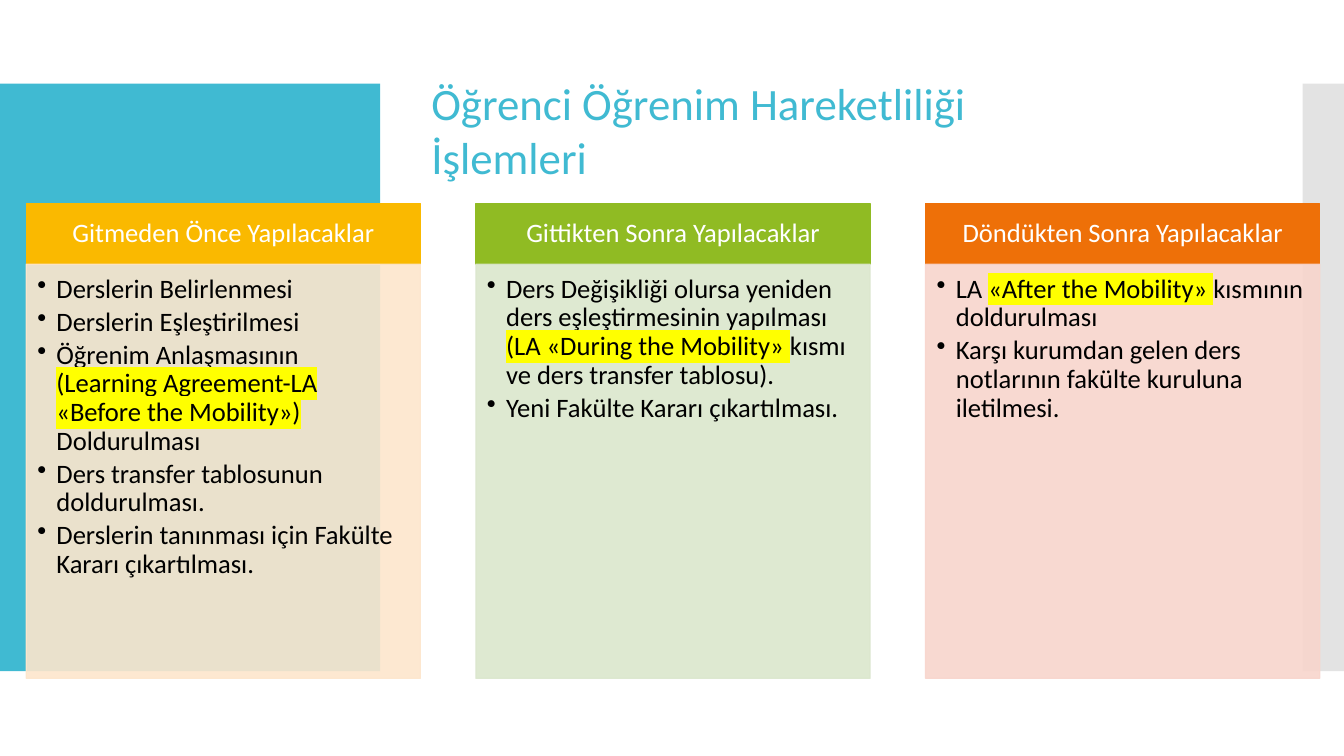
"""Build the slide on the steps of student study mobility."""
import dataclasses

import lxml.etree
import pptx
import pptx.dml.color
import pptx.enum.shapes
import pptx.enum.text
import pptx.oxml.ns
import pptx.util

EMU_PER_PX = 9144
FONT = "Calibri"
COLOURS = {
    "teal": "40BAD2", "grey": "C8C8C8", "white": "FFFFFF", "black": "000000",
    "marker": "FFFF00", "amber": "FAB900", "cream": "FDE6CC", "green": "90BB23",
    "mint": "DBE7CD", "orange": "EE7008", "pink": "F8D5CC",
}


@dataclasses.dataclass(frozen=True)
class Span:
    text: str
    marked: bool = False


@dataclasses.dataclass(frozen=True)
class Column:
    title: str
    header_colour: str
    body_colour: str
    items: tuple[tuple[Span, ...], ...]


COLUMNS = (
    Column("Gitmeden Önce Yapılacaklar", "amber", "cream", (
        (Span("Derslerin Belirlenmesi"),),
        (Span("Derslerin Eşleştirilmesi"),),
        (Span("Öğrenim Anlaşmasının "),
         Span("(Learning Agreement-LA «Before the Mobility») ", True),
         Span("Doldurulması")),
        (Span("Ders transfer tablosunun doldurulması."),),
        (Span("Derslerin tanınması için Fakülte Kararı çıkartılması."),),
    )),
    Column("Gittikten Sonra Yapılacaklar", "green", "mint", (
        (Span("Ders Değişikliği olursa yeniden ders eşleştirmesinin yapılması "),
         Span("(LA «During the Mobility» ", True),
         Span("kısmı ve ders transfer tablosu).")),
        (Span("Yeni Fakülte Kararı çıkartılması."),),
    )),
    Column("Döndükten Sonra Yapılacaklar", "orange", "pink", (
        (Span("LA "), Span("«After the Mobility» ", True), Span("kısmının doldurulması")),
        (Span("Karşı kurumdan gelen ders notlarının fakülte kuruluna iletilmesi."),),
    )),
)
COLUMN_LEFT, COLUMN_PITCH, COLUMN_WIDTH = 26, 446, 391
HEADER_TOP, HEADER_HEIGHT, BODY_HEIGHT = 202, 60, 411


def px(value: int) -> pptx.util.Emu:
    return pptx.util.Emu(value * EMU_PER_PX)


def rgb(name: str) -> pptx.dml.color.RGBColor:
    return pptx.dml.color.RGBColor.from_string(COLOURS[name])


def add_child(parent, tag: str, **attributes: str):
    child = lxml.etree.SubElement(parent, pptx.oxml.ns.qn(tag))
    for key, value in attributes.items():
        child.set(key, value)
    return child


def add_rectangle(page, left: int, top: int, width: int, height: int, colour: str,
                  opacity: int = 100, outlined: bool = False):
    box = page.shapes.add_shape(pptx.enum.shapes.MSO_SHAPE.RECTANGLE,
                                px(left), px(top), px(width), px(height))
    box.shadow.inherit = False
    box.fill.solid()
    box.fill.fore_color.rgb = rgb(colour)
    if outlined:
        box.line.color.rgb = rgb(colour)
        box.line.width = pptx.util.Pt(0.85)
    else:
        box.line.fill.background()
    if opacity < 100:
        for fill_colour in box._element.spPr.iter(pptx.oxml.ns.qn("a:srgbClr")):
            add_child(fill_colour, "a:alpha", val=str(opacity * 1000))
    return box


def set_frame(box, anchor, left: int, top: int, right: int, bottom: int):
    frame = box.text_frame
    frame.word_wrap = True
    frame.vertical_anchor = anchor
    frame.margin_left, frame.margin_top = px(left), px(top)
    frame.margin_right, frame.margin_bottom = px(right), px(bottom)
    return frame


def write_spans(para, spans: tuple[Span, ...], size: int, colour: str, align) -> None:
    para.alignment = align
    para.font.name = FONT
    para.font.size = pptx.util.Pt(size)
    para.font.color.rgb = rgb(colour)
    for span in spans:
        run = para.add_run()
        run.text = span.text
        if span.marked:
            highlight = add_child(run._r.get_or_add_rPr(), "a:highlight")
            add_child(highlight, "a:srgbClr", val=COLOURS["marker"])


def set_bullet(para) -> None:
    properties = para._p.get_or_add_pPr()
    properties.set("marL", str(px(19)))
    properties.set("indent", str(px(-19)))
    bullet = add_child(properties, "a:buChar", char="•")
    properties.find(pptx.oxml.ns.qn("a:defRPr")).addprevious(bullet)


def add_column(page, index: int, column: Column) -> None:
    align = pptx.enum.text.PP_ALIGN
    anchor = pptx.enum.text.MSO_ANCHOR
    left = COLUMN_LEFT + index * COLUMN_PITCH
    header = add_rectangle(page, left, HEADER_TOP, COLUMN_WIDTH, HEADER_HEIGHT,
                           column.header_colour, outlined=True)
    frame = set_frame(header, anchor.MIDDLE, 15, 8, 15, 8)
    para = frame.paragraphs[0]
    write_spans(para, (Span(column.title),), 19, "white", align.CENTER)
    para.line_spacing = 0.9

    body = add_rectangle(page, left, HEADER_TOP + HEADER_HEIGHT, COLUMN_WIDTH, BODY_HEIGHT,
                         column.body_colour, opacity=90, outlined=True)
    frame = set_frame(body, anchor.TOP, 11, 11, 15, 17)
    for number, spans in enumerate(column.items):
        para = frame.add_paragraph() if number else frame.paragraphs[0]
        write_spans(para, spans, 19, "black", align.LEFT)
        para.line_spacing = 0.9
        para.space_after = pptx.util.Pt(3)
        set_bullet(para)


def add_title(page) -> None:
    box = page.shapes.add_textbox(px(418), px(70), px(590), px(118))
    frame = set_frame(box, pptx.enum.text.MSO_ANCHOR.TOP, 10, 5, 10, 5)
    write_spans(frame.paragraphs[0], (Span("Öğrenci Öğrenim Hareketliliği İşlemleri"),),
                32, "teal", pptx.enum.text.PP_ALIGN.LEFT)


def main() -> None:
    deck = pptx.Presentation()
    deck.slide_width, deck.slide_height = px(1333), px(750)
    page = deck.slides.add_slide(deck.slide_layouts[6])
    add_rectangle(page, 0, 83, 377, 583, "teal")
    add_rectangle(page, 1292, 83, 41, 583, "grey", opacity=50)
    for index, column in enumerate(COLUMNS):
        add_column(page, index, column)
    add_title(page)
    deck.save("out.pptx")


if __name__ == "__main__":
    main()
